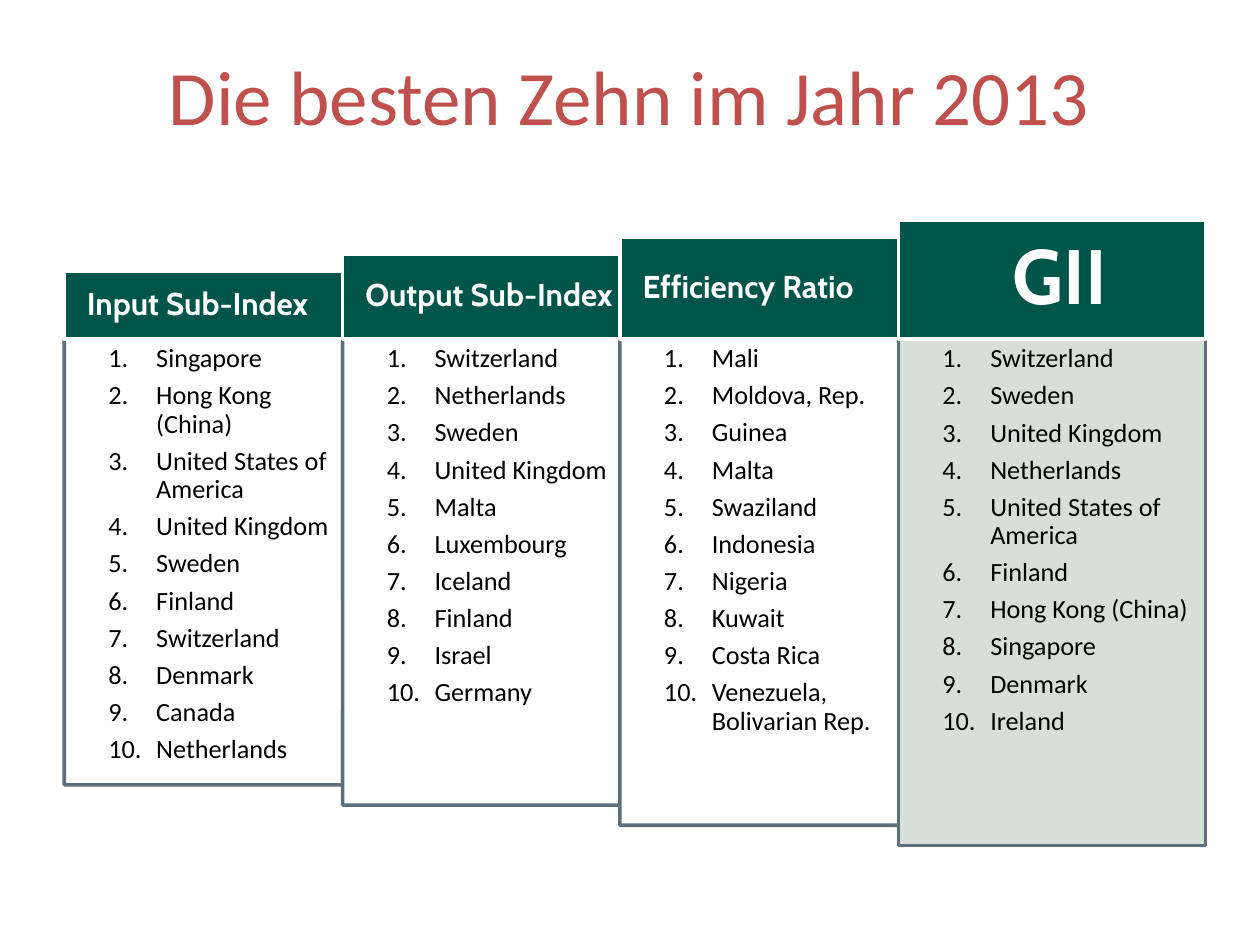
from dataclasses import dataclass

from pptx import Presentation
from pptx.dml.color import RGBColor
from pptx.enum.shapes import MSO_SHAPE
from pptx.enum.text import MSO_ANCHOR, MSO_AUTO_SIZE, PP_ALIGN
from pptx.oxml.ns import qn
from pptx.util import Pt

PX = 9144
RECT = MSO_SHAPE.RECTANGLE
TOP, MIDDLE = MSO_ANCHOR.TOP, MSO_ANCHOR.MIDDLE
LEFT, CENTER = PP_ALIGN.LEFT, PP_ALIGN.CENTER
GROW = MSO_AUTO_SIZE.SHAPE_TO_FIT_TEXT


@dataclass(frozen=True)
class Theme:
    red: str = "C0504D"
    green: str = "00554A"
    slate: str = "5C6F7B"
    sage: str = "D8DED8"
    white: str = "FFFFFF"
    black: str = "000000"
    plain: str = "Calibri"
    strong: str = "Cabin"
    large: int = 44
    label: int = 18
    entry: int = 15
    border: int = 2


THEME = Theme()

RANKS = [
    ("Input Sub-Index", 256, 221, [
        "Singapore", "Hong Kong (China)", "United States of America",
        "United Kingdom", "Sweden", "Finland", "Switzerland", "Denmark",
        "Canada", "Netherlands"]),
    ("Output Sub-Index", 256, 256, [
        "Switzerland", "Netherlands", "Sweden", "United Kingdom", "Malta",
        "Luxembourg", "Iceland", "Finland", "Israel", "Germany"]),
    ("Efficiency Ratio", 256, 236, [
        "Mali", "Moldova, Rep.", "Guinea", "Malta", "Swaziland", "Indonesia",
        "Nigeria", "Kuwait", "Costa Rica", "Venezuela, Bolivarian Rep."]),
    ("GII", 244, 244, [
        "Switzerland", "Sweden", "United Kingdom", "Netherlands",
        "United States of America", "Finland", "Hong Kong (China)",
        "Singapore", "Denmark", "Ireland"]),
]


def write(frame, lines, size, color, font=THEME.plain, bold=False, align=LEFT,
          anchor=TOP, pads=(10, 5, 10, 5), margin=0, indent=0, dense=True,
          count=False):
    frame.word_wrap = True
    frame.vertical_anchor = anchor
    (frame.margin_left, frame.margin_top,
     frame.margin_right, frame.margin_bottom) = [pad * PX for pad in pads]
    for index, line in enumerate(lines):
        para = frame.add_paragraph() if index else frame.paragraphs[0]
        para.alignment = align
        if dense:
            para.line_spacing = 0.9
            para.space_before = Pt(0)
            para.space_after = Pt(size // 3)
        props = para._p.get_or_add_pPr()
        props.set("marL", str(margin * PX))
        props.set("indent", str(indent * PX))
        if count:
            mark = props.makeelement(qn("a:buAutoNum"), {"type": "arabicPeriod"})
            props.append(mark)
        run = para.add_run()
        run.text = line
        run.font.size = Pt(size)
        run.font.name = font
        run.font.bold = bold
        run.font.color.rgb = RGBColor.from_string(color)


def paint(shape, fill, line):
    shape.shadow.inherit = False
    shape.fill.solid()
    shape.fill.fore_color.rgb = RGBColor.from_string(fill)
    shape.line.color.rgb = RGBColor.from_string(line)
    shape.line.width = Pt(THEME.border)


def add_rect(slide, x, y, w, h):
    return slide.shapes.add_shape(RECT, x * PX, y * PX, w * PX, h * PX)


def add_callout(slide, x, y, w, h):
    right = x + w
    start, point, end = [y + round(h * part / 24) for part in (14, 17, 20)]
    shape = slide.shapes.build_freeform(x, y, scale=PX)
    shape.add_line_segments([
        (right, y), (right, start), (right + w // 8, point), (right, end),
        (right, y + h), (x, y + h)])
    shape = shape.convert_to_shape()
    shape._element.find(".//" + qn("a:path")).set("w", str(w))
    shape.width = w * PX
    return shape


def add_list(slide, x, y, w, h, names, last):
    body = (add_rect if last else add_callout)(slide, x, y, w, h)
    paint(body, THEME.sage if last else THEME.white, THEME.slate)
    write(body.text_frame, names, THEME.entry, THEME.black,
          pads=(35, 5, 5, 5), margin=38, indent=-38, count=True)


def add_head(slide, x, y, w, h, name, last):
    head = add_rect(slide, x, y, w, h)
    paint(head, THEME.green, THEME.white)
    write(head.text_frame, [name], THEME.large if last else THEME.label,
          THEME.white, font=THEME.strong, bold=True,
          align=CENTER if last else LEFT, anchor=MIDDLE,
          pads=(7 if last else 6,) * 4, margin=12)


def add_ranks(slide, x, base, span):
    steps = len(RANKS) - 1
    for index, (name, wide, width, names) in enumerate(RANKS):
        left = x + round(index * span / steps)
        high = 54 + round(index * 40 / steps)
        last = index == steps
        add_list(slide, left, base, width, 354 + 16 * index, names, last)
        add_head(slide, left, base - high, wide, high, name, last)


def add_title(slide, x, y, w, h, words):
    title = slide.shapes.title
    title.left, title.top, title.width, title.height = [
        side * PX for side in (x, y, w, h)]
    write(title.text_frame, [words], THEME.large, THEME.red,
          align=CENTER, anchor=MIDDLE, dense=False)
    title.text_frame.auto_size = GROW


def main():
    deck = Presentation()
    deck.slide_width, deck.slide_height = 1000 * PX, 750 * PX
    slide = deck.slides.add_slide(deck.slide_layouts[5])
    add_ranks(slide, 51, 269, 662)
    add_title(slide, 58, 33, 883, 84, "Die besten Zehn im Jahr 2013")
    deck.save("out.pptx")


if __name__ == "__main__":
    main()
